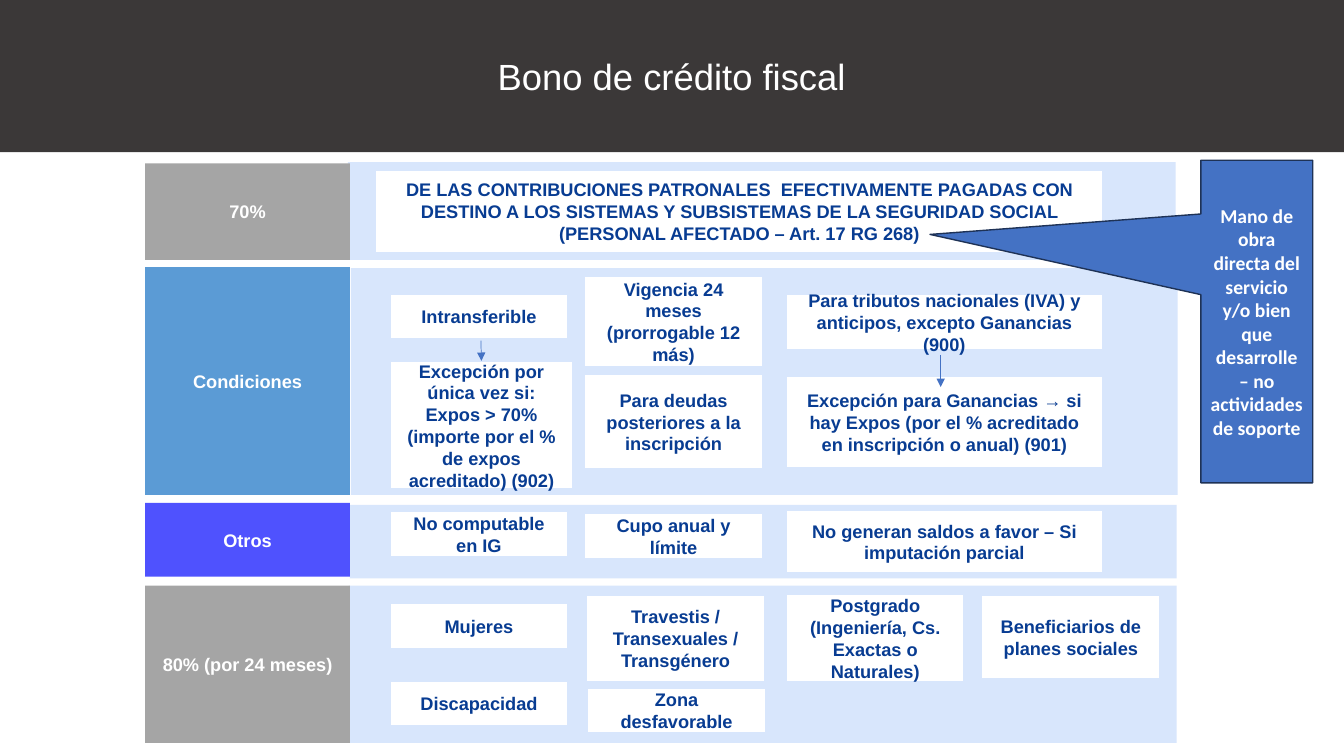
from lxml import etree
from pptx import Presentation
from pptx.dml.color import RGBColor
from pptx.enum import shapes, text
from pptx.oxml import ns
from pptx.util import Inches, Pt

DARK = RGBColor(0x3B, 0x38, 0x38)
WHITE = RGBColor(0xFF, 0xFF, 0xFF)
GRAY = RGBColor(0xA5, 0xA5, 0xA5)
SKY = RGBColor(0x5B, 0x9B, 0xD5)
VIOLET = RGBColor(0x4F, 0x52, 0xFE)
PALE = RGBColor(0xD8, 0xE6, 0xFC)
NAVY = RGBColor(0x08, 0x3C, 0x92)
BLUE = RGBColor(0x44, 0x72, 0xC4)
OUTLINE = RGBColor(0x1E, 0x32, 0x56)

presentation = Presentation()
presentation.slide_width = Inches(13.33)
presentation.slide_height = Inches(7.5)
slide = presentation.slides.add_slide(presentation.slide_layouts[6])


def add_block(kind, box, fill, line=None, line_width=2):
    shape = slide.shapes.add_shape(kind, *[Inches(value) for value in box])
    shape.shadow.inherit = False
    shape.fill.solid()
    shape.fill.fore_color.rgb = fill
    if line is None:
        shape.line.fill.background()
    else:
        shape.line.color.rgb = line
        shape.line.width = Pt(line_width)
    return shape


def write(shape, words, color, size=13, font="Arial", bold=True, margins=(0.1, 0.05)):
    frame = shape.text_frame
    frame.word_wrap = True
    frame.vertical_anchor = text.MSO_ANCHOR.MIDDLE
    frame.margin_left = frame.margin_right = Inches(margins[0])
    frame.margin_top = frame.margin_bottom = Inches(margins[1])
    frame.text = words
    for paragraph in frame.paragraphs:
        paragraph.alignment = text.PP_ALIGN.CENTER
        for run in paragraph.runs:
            run.font.name = font
            run.font.size = Pt(size)
            run.font.bold = bold
            run.font.color.rgb = color


RECTANGLE = shapes.MSO_SHAPE.RECTANGLE

# Title band
title = add_block(RECTANGLE, (0, 0, 13.33, 1.51), DARK)
write(title, "Bono de crédito fiscal", WHITE, size=26, bold=False, margins=(0.1, 0.1))

# Rows: label, colour, label top and height, panel left, top, width and height
rows = [
    ("70%", GRAY, 1.62, 0.96, (3.45, 1.61, 8.21, 0.97)),
    ("Condiciones", SKY, 2.65, 2.26, (3.48, 2.66, 8.2, 2.25)),
    ("Otros", VIOLET, 4.99, 0.73, (3.47, 5.01, 8.2, 0.73)),
    ("80% (por 24 meses)", GRAY, 5.81, 1.56, (3.46, 5.81, 8.21, 1.56)),
]
for label, color, top, height, panel in rows:
    add_block(RECTANGLE, panel, PALE)
    label_block = add_block(RECTANGLE, (1.44, top, 2.03, height), color)
    write(label_block, label, WHITE, margins=(0.08, 0.04))

# White cards inside the panels
NARROW, WIDE = 1.78, 3.15
cards = [
    (3.72, 1.68, 7.22, 0.83, "DE LAS CONTRIBUCIONES PATRONALES  EFECTIVAMENTE PAGADAS CON DESTINO "
     "A LOS SISTEMAS Y SUBSISTEMAS DE LA SEGURIDAD SOCIAL (PERSONAL AFECTADO – Art. 17 RG 268)"),
    (3.86, 2.91, NARROW, 0.46, "Intransferible"),
    (5.79, 2.73, NARROW, 0.92, "Vigencia 24 meses (prorrogable 12 más)"),
    (7.79, 2.91, WIDE, 0.57,
     "Para tributos nacionales (IVA) y anticipos, excepto Ganancias (900)"),
    (5.79, 3.71, NARROW, 0.95, "Para deudas posteriores a la inscripción"),
    (7.79, 3.73, WIDE, 0.92, "Excepción para Ganancias → si hay Expos "
     "(por el % acreditado en inscripción o anual) (901)"),
    (3.86, 5.07, NARROW, 0.46, "No computable en IG"),
    (5.79, 5.09, NARROW, 0.46, "Cupo anual y límite"),
    (7.79, 5.06, WIDE, 0.63, "No generan saldos a favor – Si imputación parcial"),
    (3.86, 5.98, NARROW, 0.46, "Mujeres"),
    (5.81, 5.9, NARROW, 0.87, "Travestis / Transexuales / Transgénero"),
    (7.79, 5.89, NARROW, 0.88, "Postgrado (Ingeniería, Cs. Exactas o Naturales)"),
    (9.73, 5.9, NARROW, 0.84, "Beneficiarios de planes sociales"),
    (3.86, 6.75, NARROW, 0.46, "Discapacidad"),
    (5.82, 6.82, NARROW, 0.46, "Zona desfavorable"),
    (3.86, 3.58, 1.83, 1.28, "Excepción por única vez si:\n"
     "Expos > 70% (importe por el % de expos acreditado) (902)"),
]
for *box, words in cards:
    card = add_block(RECTANGLE, box, WHITE, PALE)
    write(card, words, NAVY, margins=(0.13, 0.07))
transfer_exception = card

# Arrows from each condition to its exception
for x, start, end, target in [(4.77, 3.38, 3.58, transfer_exception), (9.33, 3.52, 3.84, None)]:
    arrow = slide.shapes.add_connector(
        shapes.MSO_CONNECTOR.STRAIGHT, Inches(x), Inches(start), Inches(x), Inches(end))
    if target is not None:
        arrow.end_connect(target, 0)
    arrow.line.color.rgb = BLUE
    arrow.line.width = Pt(0.5)
    etree.SubElement(arrow.line._get_or_add_ln(), ns.qn("a:tailEnd"), type="triangle")
    etree.SubElement(arrow._element.spPr, ns.qn("a:effectLst"))

# Callout on the right, with side margins that keep its longest word whole
callout = add_block(shapes.MSO_SHAPE.RECTANGULAR_CALLOUT, (11.91, 1.59, 1.11, 3.2),
                    BLUE, OUTLINE, 1)
callout.adjustments[0] = -2.92
callout.adjustments[1] = -0.27
write(callout, "Mano de obra directa del servicio y/o bien que desarrolle – no actividades de soporte",
      WHITE, size=14, font="Calibri", margins=(0.09, 0.05))

presentation.save("out.pptx")
